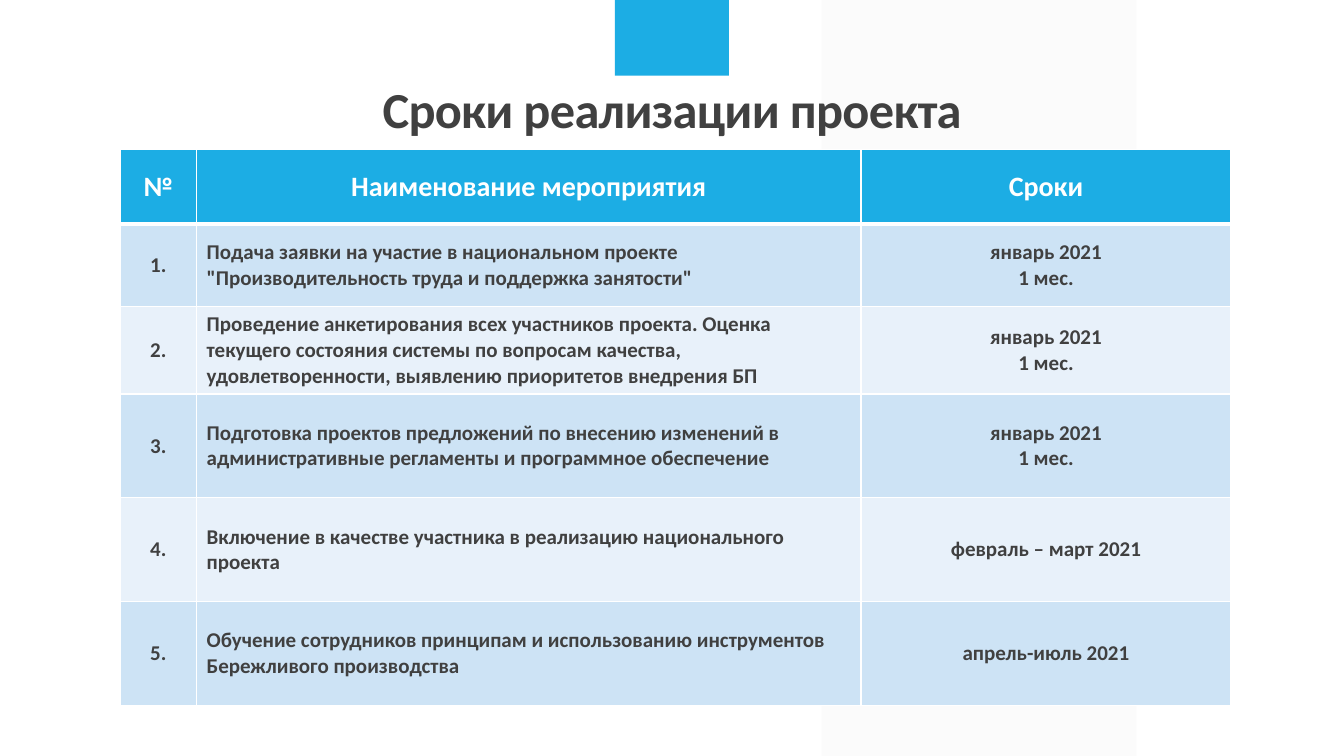
from lxml import etree
from pptx import Presentation
from pptx.dml.color import RGBColor
from pptx.enum.shapes import MSO_SHAPE
from pptx.enum.text import MSO_ANCHOR, MSO_AUTO_SIZE, PP_ALIGN
from pptx.oxml.ns import qn
from pptx.util import Pt

EMU_PER_PX = 9144  # 100 px to the inch
FONT = "Calibri"
TITLE_ONLY = 5

RECTANGLE = MSO_SHAPE.RECTANGLE
PARALLELOGRAM = MSO_SHAPE.PARALLELOGRAM
MIDDLE = MSO_ANCHOR.MIDDLE
NO_AUTOFIT = MSO_AUTO_SIZE.NONE
LEFT, CENTER = PP_ALIGN.LEFT, PP_ALIGN.CENTER

BLUE = RGBColor(0x1C, 0xAD, 0xE4)
GREY = RGBColor(0xF2, 0xF2, 0xF2)
DARK = RGBColor(0x40, 0x40, 0x40)
WHITE = RGBColor(0xFF, 0xFF, 0xFF)
BANDS = (RGBColor(0xCD, 0xE3, 0xF5), RGBColor(0xE8, 0xF1, 0xFA))

HEADINGS = ("№", "Наименование мероприятия", "Сроки")
STAGES = (
    ('Подача заявки на участие в национальном проекте '
     '"Производительность труда и поддержка занятости"',
     "январь 2021\n1 мес."),
    ("Проведение анкетирования всех участников проекта. Оценка текущего "
     "состояния системы по вопросам качества, удовлетворенности, "
     "выявлению приоритетов внедрения БП",
     "январь 2021\n1 мес."),
    ("Подготовка проектов предложений по внесению изменений в "
     "административные регламенты и программное обеспечение",
     "январь 2021\n1 мес."),
    ("Включение в качестве участника в реализацию национального проекта",
     "февраль – март 2021"),
    ("Обучение сотрудников принципам и использованию инструментов "
     "Бережливого производства",
     "апрель-июль 2021"),
)
COLUMN_WIDTHS = (76, 659, 367)
ROW_HEIGHTS = (74, 82, 87, 103, 103, 103)


def px(length):
    return length * EMU_PER_PX


def set_values(target, values):
    for name, value in values.items():
        setattr(target, name, value)


class SlideBuilder:
    """Holds the text style and the current slide."""

    def __init__(self, slide):
        self.slide = slide
        self.font = {"name": FONT, "bold": True}

    def place(self, box, left, top, width, height):
        set_values(box, {"left": px(left), "top": px(top),
                         "width": px(width), "height": px(height)})

    def fill_text(self, frame, text, size, color, align):
        frame.text = text
        for para in frame.paragraphs:
            para.alignment = align
            for span in para.runs:
                set_values(span.font, {**self.font, "size": Pt(size)})
                span.font.color.rgb = color

    def shape(self, kind, area, color, opacity=100):
        box = self.slide.shapes.add_shape(kind, *map(px, area))
        box.shadow.inherit = False
        box.fill.solid()
        box.fill.fore_color.rgb = color
        box.line.fill.background()
        if opacity < 100:
            tint = box._element.spPr.find(".//" + qn("a:srgbClr"))
            etree.SubElement(tint, qn("a:alpha"), val=str(opacity * 1000))
        return box

    def title(self, text, area):
        box = self.slide.shapes.title
        self.place(box, *area)
        frame = box.text_frame
        self.fill_text(frame, text, 36, DARK, CENTER)
        set_values(frame, {"word_wrap": True, "auto_size": NO_AUTOFIT,
                           "vertical_anchor": MIDDLE})
        para = frame.paragraphs[0]
        para.line_spacing = 0.9
        para.runs[0]._r.get_or_add_rPr().set("spc", "-50")
        # Bring the title in front of the decoration
        self.slide.shapes._spTree.append(box._element)

    def cell(self, cell, text, size, color, align, fill, top=1, bottom=1):
        self.fill_text(cell.text_frame, text, size, color, align)
        cell.vertical_anchor = MIDDLE
        properties = cell._tc.get_or_add_tcPr()
        for side, points in (("L", 1), ("R", 1), ("T", top), ("B", bottom)):
            line = etree.SubElement(properties, qn("a:ln" + side), w=str(int(Pt(points))))
            paint = etree.SubElement(line, qn("a:solidFill"))
            etree.SubElement(paint, qn("a:srgbClr"), val=str(WHITE))
        cell.fill.solid()
        cell.fill.fore_color.rgb = fill

    def schedule(self, left, top):
        area = (left, top, sum(COLUMN_WIDTHS), sum(ROW_HEIGHTS))
        table = self.slide.shapes.add_table(
            len(ROW_HEIGHTS), len(COLUMN_WIDTHS), *map(px, area)).table
        table.horz_banding = False
        for column, width in zip(table.columns, COLUMN_WIDTHS):
            column.width = px(width)
        for row, height in zip(table.rows, ROW_HEIGHTS):
            row.height = px(height)

        # Heading row
        for index, heading in enumerate(HEADINGS):
            cell = table.cell(0, index)
            self.cell(cell, heading, 20, WHITE, CENTER, BLUE, bottom=3)
            set_values(cell, {"margin_left": px(12), "margin_right": px(12),
                              "margin_top": px(6), "margin_bottom": px(6)})

        # Numbered stages
        for number, (stage, dates) in enumerate(STAGES, start=1):
            fill = BANDS[(number - 1) % 2]
            top_line = 3 if number == 1 else 1
            values = (f"{number}.", stage, dates)
            for index, (text, align) in enumerate(zip(values, (CENTER, LEFT, CENTER))):
                self.cell(table.cell(number, index), text, 15, DARK, align,
                          fill, top=top_line)


def main():
    deck = Presentation()
    set_values(deck, {"slide_width": px(1333), "slide_height": px(750)})
    page = SlideBuilder(deck.slides.add_slide(deck.slide_layouts[TITLE_ONLY]))

    # Background decoration
    stripe = page.shape(PARALLELOGRAM, (815, 0, 312, 750), GREY, opacity=30)
    stripe.adjustments[0] = 0
    page.shape(RECTANGLE, (610, 0, 113, 75), BLUE)

    # Title and schedule
    page.title("Сроки реализации проекта", (146, 79, 1041, 65))
    page.schedule(119, 148)

    deck.save("out.pptx")


if __name__ == "__main__":
    main()
